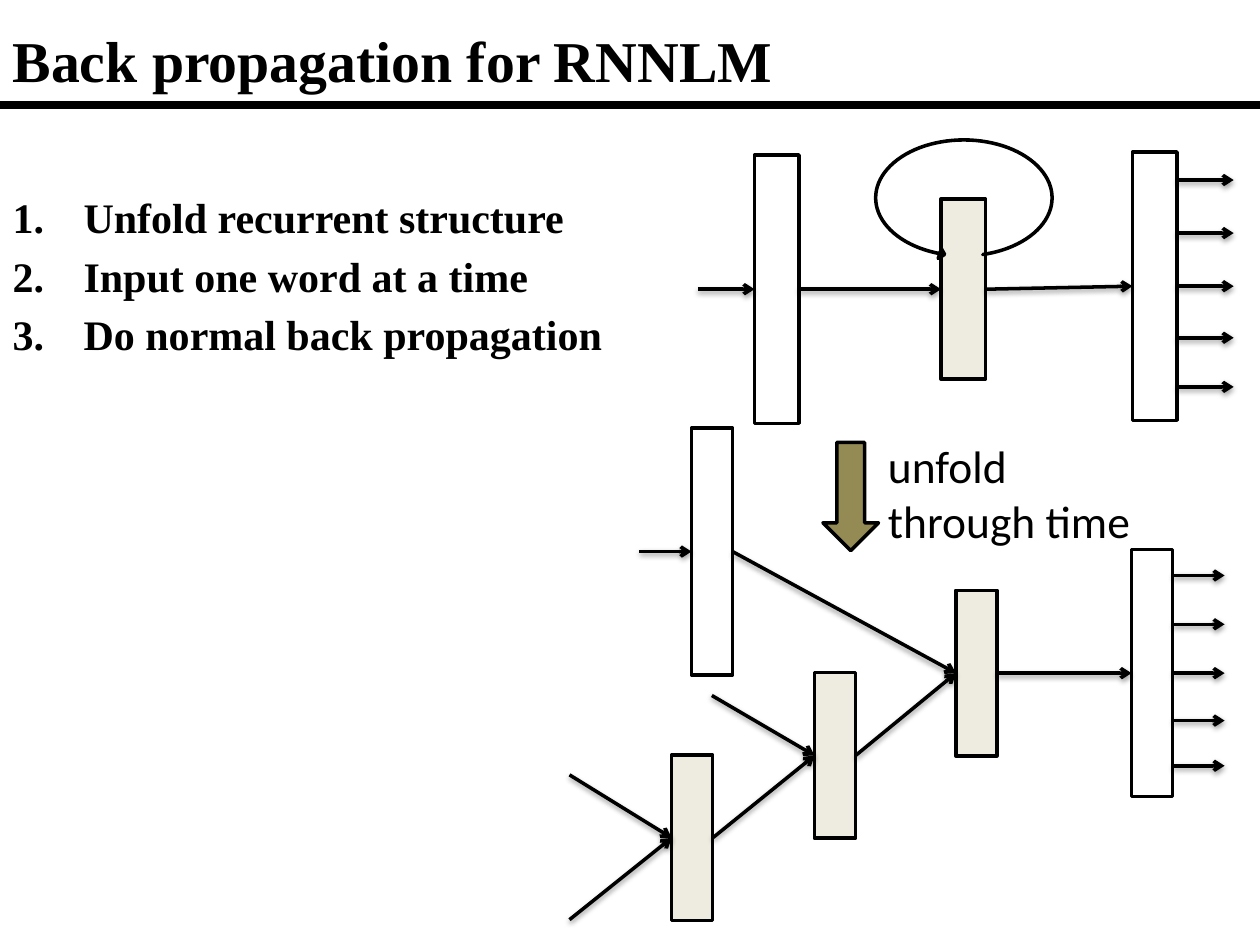
from dataclasses import dataclass

from lxml import etree
from pptx import Presentation
from pptx import util as u
from pptx.dml.color import RGBColor
from pptx.enum import shapes, text
from pptx.oxml import ns


@dataclass(frozen=True)
class Theme:
    ink: str = "000000"
    layer: str = "FFFFFF"
    hidden: str = "EEECE1"
    unfold: str = "948A54"
    heading_font: str = "Times New Roman"
    label_font: str = "Calibri"
    title_size: float = 33
    list_size: float = 24
    label_size: float = 26
    line: float = 2
    rule: float = 4.5


class SlideBuilder:
    def __init__(self, slide, theme):
        self.slide = slide
        self.theme = theme

    def place(self, box, left, top, width, height):
        box.left, box.top = u.Cm(left), u.Cm(top)
        box.width, box.height = u.Cm(width), u.Cm(height)

    def set_words(self, box, words, font, size, bold):
        frame = box.text_frame
        frame.word_wrap = True
        frame.text = words
        for para in frame.paragraphs:
            para.alignment = text.PP_ALIGN.LEFT
            for span in para.runs:
                span.font.name, span.font.size, span.font.bold = font, u.Pt(size), bold
                span.font.color.rgb = RGBColor.from_string(self.theme.ink)

    def title(self, words, *area):
        box = self.slide.shapes.title
        self.place(box, *area)
        self.set_words(box, words, self.theme.heading_font, self.theme.title_size, True)

    def numbered_list(self, items, *area):
        box = self.slide.placeholders[1]
        self.place(box, *area)
        self.set_words(box, "\n".join(items), self.theme.heading_font,
                       self.theme.list_size, True)
        for para in box.text_frame.paragraphs:
            properties = para._p.get_or_add_pPr()
            properties.set("marL", str(u.Cm(1.43)))
            properties.set("indent", str(u.Cm(-1.43)))
            number = etree.SubElement(properties, ns.qn("a:buAutoNum"))
            number.set("type", "arabicPeriod")

    def label(self, words, *area):
        box = self.slide.shapes.add_textbox(*map(u.Cm, area))
        self.set_words(box, words, self.theme.label_font, self.theme.label_size, False)

    def shape(self, kind, fill, *area):
        item = self.slide.shapes.add_shape(kind, *map(u.Cm, area))
        item.shadow.inherit = False
        item.fill.solid()
        item.fill.fore_color.rgb = RGBColor.from_string(fill)
        item.line.color.rgb = RGBColor.from_string(self.theme.ink)
        item.line.width = u.Pt(self.theme.line)
        return item

    def layer(self, left, middle, scale=1, hidden=False):
        height = (3.63 if hidden else 5.41) * scale
        fill = self.theme.hidden if hidden else self.theme.layer
        return self.shape(shapes.MSO_SHAPE.RECTANGLE, fill,
                          left, middle - height / 2, 0.9 * scale, height)

    def loop(self, *area):
        item = self.shape(shapes.MSO_SHAPE.CIRCULAR_ARROW, self.theme.ink, *area)
        for index, value in enumerate((0, 2.75, 39.99, 65.2, 0.04)):
            item.adjustments[index] = value
        item.rotation = 180
        item._element.spPr.find(ns.qn("a:xfrm")).set("flipV", "1")

    def connector(self, start, end, width):
        line = self.slide.shapes.add_connector(
            shapes.MSO_CONNECTOR.STRAIGHT, *map(u.Cm, start + end))
        line.line.color.rgb = RGBColor.from_string(self.theme.ink)
        line.line.width = u.Pt(width)
        return line

    def rule(self, start, end):
        line = self.connector(start, end, self.theme.rule)
        etree.SubElement(line._element.spPr, ns.qn("a:effectLst"))

    def arrow(self, start, end):
        """Each end is either a point in cm or a layer to join; keeps the theme's soft shadow."""
        points = [stop if isinstance(stop, tuple) else (0, 0) for stop in (start, end)]
        line = self.connector(*points, self.theme.line)
        if not isinstance(start, tuple):
            line.begin_connect(start, 3)
        if not isinstance(end, tuple):
            line.end_connect(end, 1)
        outline = line._element.spPr.find(ns.qn("a:ln"))
        etree.SubElement(outline, ns.qn("a:tailEnd")).set("type", "arrow")

    def input_arrow(self, layer, scale=1):
        middle = (layer.top + layer.height / 2) / u.Cm(1)
        self.arrow((layer.left / u.Cm(1) - 1.14 * scale, middle), layer)

    def output_arrows(self, layer, scale=1):
        side = (layer.left + layer.width) / u.Cm(1)
        middle = (layer.top + layer.height / 2) / u.Cm(1)
        for offset in (-2.14, -1.07, 0, 1.04, 2.03):
            y = middle + offset * scale
            self.arrow((side, y) if offset else layer, (side + 1.14 * scale, y))


def main():
    deck = Presentation()
    deck.slide_width, deck.slide_height = u.Cm(25.4), u.Cm(19.05)
    theme = Theme()
    page = SlideBuilder(deck.slides.add_slide(deck.slide_layouts[1]), theme)

    # Heading and steps
    page.rule((0, 2.12), (25.4, 2.12))
    page.title("Back propagation for RNNLM", 0, 0.2, 25.37, 2)
    page.numbered_list(["Unfold recurrent structure", "Input one word at a time",
                        "Do normal back propagation"], 0, 3.73, 15.49, 3.73)

    # Recurrent network
    source = page.layer(15.21, 5.83)
    hidden = page.layer(18.97, 5.83, hidden=True)
    output = page.layer(22.83, 5.77)
    page.input_arrow(source)
    page.arrow(source, hidden)
    page.arrow(hidden, output)
    page.output_arrows(output)
    page.loop(17.55, 2.72, 3.76, 2.54)

    # Network unfolded through time
    scale = 0.92
    source = page.layer(13.94, 11.12, scale)
    output = page.layer(22.81, 13.57, scale)
    first, second, third = [page.layer(left, middle, scale, hidden=True) for left, middle in
                            ((13.54, 16.89), (16.42, 15.23), (19.27, 13.57))]
    page.input_arrow(source, scale)
    links = [((11.48, 15.62), first), ((11.48, 18.54), first), ((14.35, 14.02), second),
             (first, second), (second, third), (source, third), (third, output)]
    for start, end in links:
        page.arrow(start, end)
    page.output_arrows(output, scale)

    # Step between the two networks
    page.shape(shapes.MSO_SHAPE.DOWN_ARROW, theme.unfold, 16.59, 8.92, 1.12, 2.18)
    page.label("unfold\nthrough time", 17.65, 8.71, 6.12, 2.49)

    deck.save("out.pptx")


if __name__ == "__main__":
    main()
